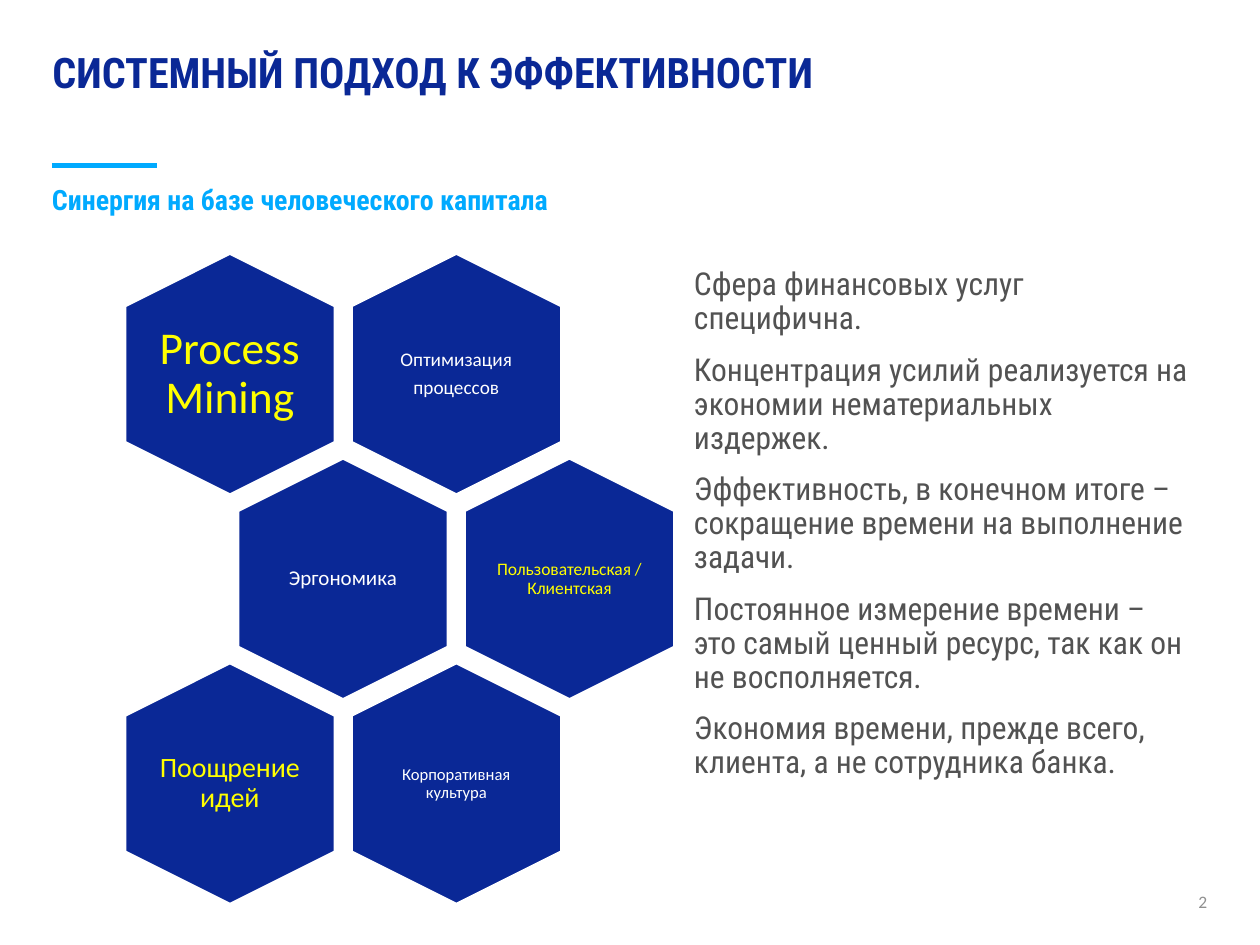
"""Build the slide on a systemic approach to efficiency."""
import pptx
import pptx.util
import pptx.dml.color
import pptx.enum.shapes
import pptx.enum.text
from lxml import etree

Pt = pptx.util.Pt
PP_ALIGN = pptx.enum.text.PP_ALIGN
MSO_ANCHOR = pptx.enum.text.MSO_ANCHOR

HEAD, BODY = "Roboto Condensed", "Calibri"
NAVY, SKY, GREY, PALE = "0A2896", "00AAFF", "525252", "909090"
WHITE, YELLOW = "FFFFFF", "FFFF00"

TITLE = "СИСТЕМНЫЙ ПОДХОД К ЭФФЕКТИВНОСТИ"
SUBTITLE = "Синергия на базе человеческого капитала"
THESES = [
    "Сфера финансовых услуг специфична.",
    "Концентрация усилий реализуется на экономии нематериальных издержек.",
    "Эффективность, в конечном итоге – сокращение времени на выполнение задачи.",
    "Постоянное измерение времени – это самый ценный ресурс, так как он не восполняется.",
    "Экономия времени, прежде всего, клиента, а не сотрудника банка.",
]
HONEYCOMB = [
    [(["Process Mining"], 26, YELLOW, 0), (["Оптимизация", "процессов"], 11, WHITE, 3.6)],
    [(["Эргономика"], 12, WHITE, 3.6), (["Пользовательская / Клиентская"], 10, YELLOW, 0)],
    [(["Поощрение идей"], 16, YELLOW, 0), (["Корпоративная культура"], 9.5, WHITE, 2.9)],
]
HEX_LENGTH, HEX_WIDTH = 137.2, 119.4
LABEL_W, LABEL_H = 83, 95
FIRST_X, FIRST_Y = 131.4, 213.8
COL_STEP, ROW_STEP, ROW_SHIFT = 129.4, 117, 64.6


def rgb(color):
    return pptx.dml.color.RGBColor.from_string(color)


def add_text(s, paragraphs, box, size=18, color=GREY, font=HEAD, bold=False, align=PP_ALIGN.LEFT,
             anchor=MSO_ANCHOR.TOP, inset=(0, 0), line=0.9, gap=0):
    tf = s.shapes.add_textbox(*map(Pt, box)).text_frame
    tf.word_wrap = True
    tf.vertical_anchor = anchor
    tf.margin_left = tf.margin_right = Pt(inset[0])
    tf.margin_top = tf.margin_bottom = Pt(inset[1])
    for i, text in enumerate(paragraphs):
        p = tf.paragraphs[0] if i == 0 else tf.add_paragraph()
        p.alignment, p.line_spacing = align, line
        p.space_before = Pt(gap if i else 0)
        r = p.add_run()
        r.text = text
        r.font.name, r.font.size, r.font.bold = font, Pt(size), bold
        r.font.color.rgb = rgb(color)


def add_hexagon(s, x, y):
    sp = s.shapes.add_shape(pptx.enum.shapes.MSO_SHAPE.HEXAGON, Pt(x - HEX_LENGTH / 2),
                            Pt(y - HEX_WIDTH / 2), Pt(HEX_LENGTH), Pt(HEX_WIDTH))
    sp.rotation = 90
    sp.adjustments[0], sp.adjustments[1] = 0.25, 1.1547
    sp.shadow.inherit = False
    sp.fill.solid()
    sp.fill.fore_color.rgb = rgb(NAVY)
    sp.line.color.rgb = rgb(WHITE)
    sp.line.width = Pt(1)


def add_rule(s, x1, x2, y):
    sp = s.shapes.add_connector(pptx.enum.shapes.MSO_CONNECTOR.STRAIGHT, Pt(x1), Pt(y), Pt(x2), Pt(y))
    sp.line.color.rgb = rgb(SKY)
    sp.line.width = Pt(3)
    etree.SubElement(sp.element.spPr, pptx.oxml.ns.qn("a:effectLst"))


def main():
    prs = pptx.Presentation()
    prs.slide_width, prs.slide_height = Pt(720), Pt(540)
    s = prs.slides.add_slide(prs.slide_layouts[6])
    add_text(s, [TITLE], (30, 30, 456, 26), size=24, color=NAVY, bold=True)
    add_text(s, ["2"], (659.5, 509, 30.25, 29), size=10, color=PALE, font=BODY,
             align=PP_ALIGN.RIGHT, line=1.0)
    add_text(s, [SUBTITLE], (29.7, 106.5, 330.5, 17.3), size=16, color=SKY, bold=True)
    add_rule(s, 29.7, 89.8, 94.5)
    for row, cells in enumerate(HONEYCOMB):
        for col, (label, size, color, inset) in enumerate(cells):
            x = FIRST_X + col * COL_STEP + row % 2 * ROW_SHIFT
            y = FIRST_Y + row * ROW_STEP
            add_hexagon(s, x, y)
            add_text(s, label, (x - LABEL_W / 2, y - LABEL_H / 2, LABEL_W, LABEL_H), size=size,
                     color=color, font=BODY, align=PP_ALIGN.CENTER, anchor=MSO_ANCHOR.MIDDLE,
                     inset=(inset, inset), gap=4)
    add_text(s, THESES, (389.5, 149.8, 300.2, 342.7), inset=(7.2, 3.6), gap=10)
    prs.save("out.pptx")


if __name__ == "__main__":
    main()
